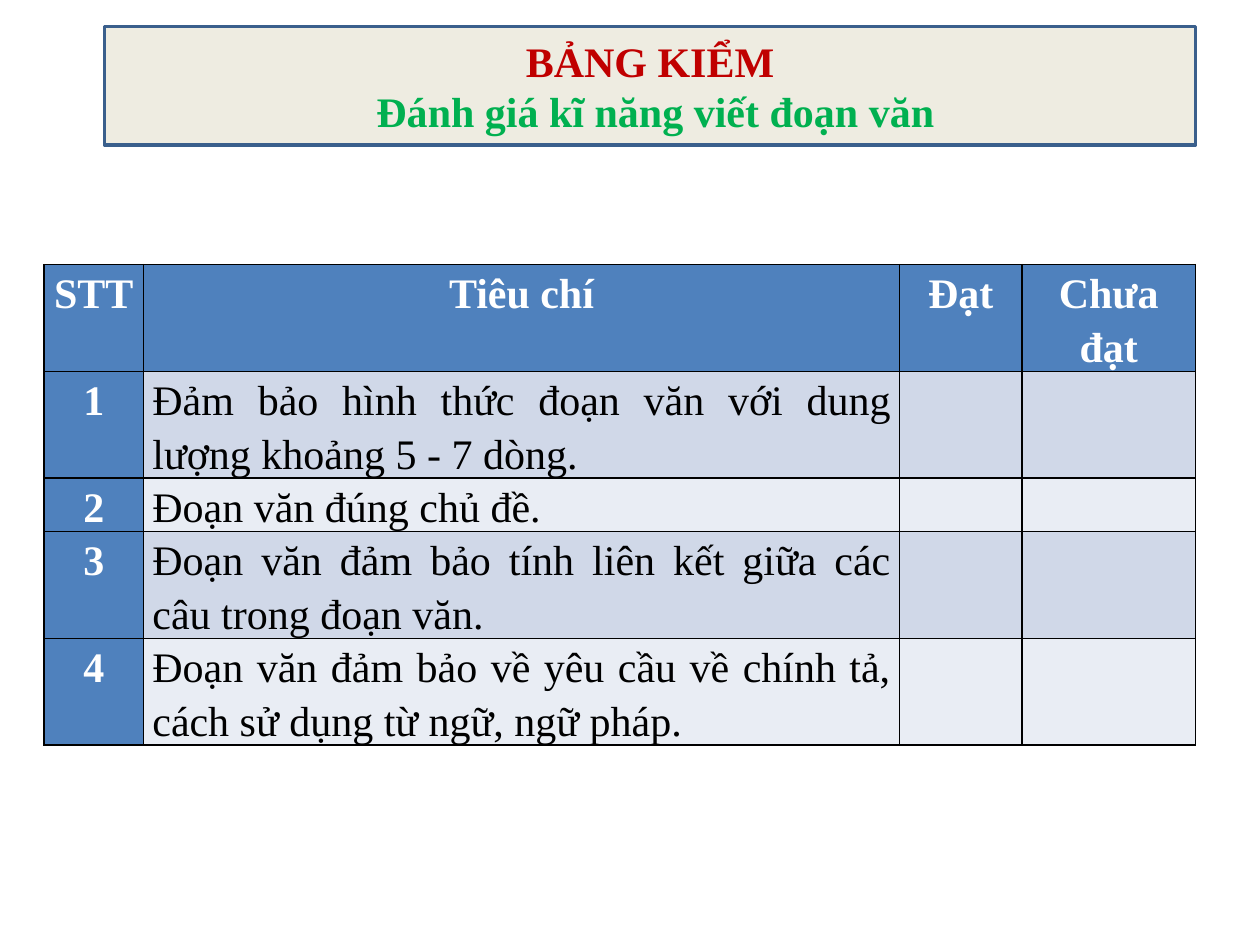
from typing import NamedTuple

from lxml import etree
from pptx import Presentation, util as u
from pptx.dml.color import RGBColor
from pptx.enum import shapes, text
from pptx.oxml.ns import qn

FONT = "Times New Roman"
WHITE = RGBColor(0xFF, 0xFF, 0xFF)
BLACK = RGBColor(0, 0, 0)
RED = RGBColor(0xC0, 0, 0)
GREEN = RGBColor(0, 0xB0, 0x50)
CREAM = RGBColor(0xEE, 0xEC, 0xE1)
NAVY = RGBColor(0x3A, 0x5F, 0x8C)
BLUE = RGBColor(0x4F, 0x81, 0xBD)
BANDS = (RGBColor(0xD0, 0xD8, 0xE8), RGBColor(0xE9, 0xED, 0xF4))


class Criterion(NamedTuple):
    wording: str
    lines: int


HEADERS = ("STT", "Tiêu chí", "Đạt", "Chưa đạt")
CRITERIA = (
    Criterion("Đảm bảo hình thức đoạn văn với dung lượng khoảng 5 - 7 dòng.", 2),
    Criterion("Đoạn văn đúng chủ đề.", 1),
    Criterion("Đoạn văn đảm bảo tính liên kết giữa các câu trong đoạn văn.", 2),
    Criterion("Đoạn văn đảm bảo về yêu cầu về chính tả, "
              "cách sử dụng từ ngữ, ngữ pháp.", 2),
)
COLUMN_WIDTHS = (0.79, 6, 0.97, 1.38)
LINE_HEIGHT = 0.39


def format_paragraph(p, color: RGBColor, bold: bool = True,
                     align=text.PP_ALIGN.CENTER) -> None:
    p.alignment = align
    for r in p.runs:
        r.font.name = FONT
        r.font.size = u.Pt(24)
        r.font.bold = bold
        r.font.color.rgb = color


def add_title(s) -> None:
    sp = s.shapes.add_shape(shapes.MSO_SHAPE.RECTANGLE, u.Inches(0.83),
                            u.Inches(0.21), u.Inches(8.66), u.Inches(0.94))
    sp.shadow.inherit = False
    sp.fill.solid()
    sp.fill.fore_color.rgb = CREAM
    sp.line.color.rgb = NAVY
    sp.line.width = u.Pt(2)
    tf = sp.text_frame
    tf.vertical_anchor = text.MSO_ANCHOR.MIDDLE
    tf.text = "BẢNG KIỂM\n Đánh giá kĩ năng viết đoạn văn"
    for p, color in zip(tf.paragraphs, (RED, GREEN)):
        format_paragraph(p, color)


def style_cell(cell, fill: RGBColor) -> None:
    """Give the cell its fill and a thin black border on all sides."""
    props = cell._tc.get_or_add_tcPr()
    for side in ("a:lnL", "a:lnR", "a:lnT", "a:lnB"):
        ln = etree.SubElement(props, qn(side), w=str(u.Pt(1)))
        solid = etree.SubElement(ln, qn("a:solidFill"))
        etree.SubElement(solid, qn("a:srgbClr"), val=str(BLACK))
    cell.fill.solid()
    cell.fill.fore_color.rgb = fill


def write_cell(cell, wording: str, color: RGBColor, bold: bool, align) -> None:
    cell.margin_left = cell.margin_right = u.Inches(0.07)
    cell.margin_top = cell.margin_bottom = 0
    cell.text_frame.text = wording
    p = cell.text_frame.paragraphs[0]
    p.line_spacing = 1.15
    p.space_after = u.Pt(12)
    format_paragraph(p, color, bold, align)


def add_checklist(s) -> None:
    line_counts = [1] + [c.lines for c in CRITERIA]
    frame = s.shapes.add_table(
        len(line_counts), len(HEADERS), u.Inches(0.35), u.Inches(2.1),
        u.Inches(sum(COLUMN_WIDTHS)), u.Inches(LINE_HEIGHT * sum(line_counts)))
    table = frame.table
    for column, width in zip(table.columns, COLUMN_WIDTHS):
        column.width = u.Inches(width)
    for row, lines in zip(table.rows, line_counts):
        row.height = u.Inches(LINE_HEIGHT * lines)

    rows = [HEADERS] + [(str(n), c.wording, "", "")
                        for n, c in enumerate(CRITERIA, 1)]
    for i, row in enumerate(rows):
        for j, wording in enumerate(row):
            cell = table.cell(i, j)
            heading = i == 0 or j == 0
            style_cell(cell, BLUE if heading else BANDS[(i - 1) % 2])
            if heading:
                write_cell(cell, wording, WHITE, True, text.PP_ALIGN.CENTER)
            elif wording:
                write_cell(cell, wording, BLACK, False, text.PP_ALIGN.JUSTIFY)


def main() -> None:
    prs = Presentation()
    prs.slide_width, prs.slide_height = u.Inches(10), u.Inches(7.5)
    s = prs.slides.add_slide(prs.slide_layouts[6])
    add_title(s)
    add_checklist(s)
    prs.save("out.pptx")


if __name__ == "__main__":
    main()
